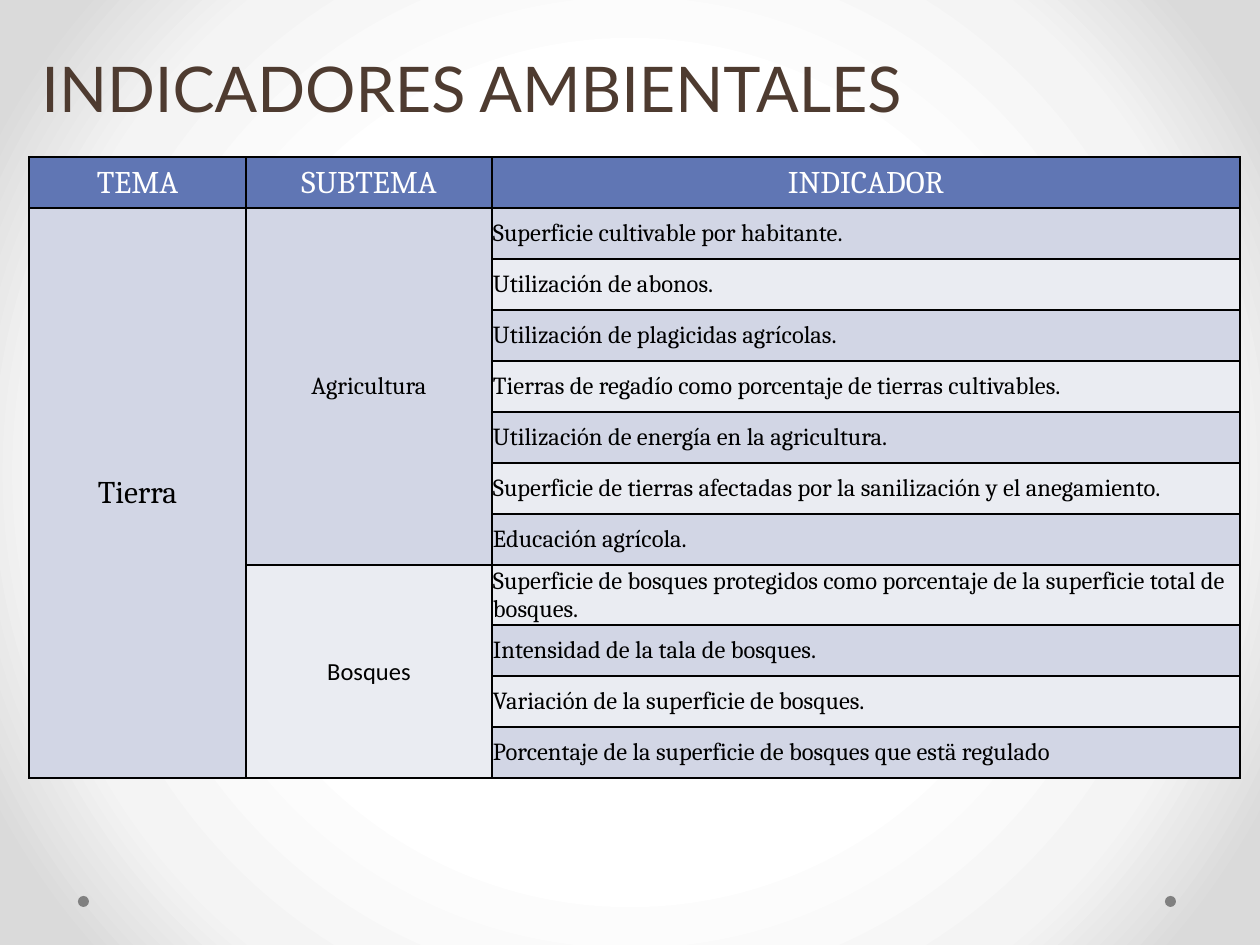
import pptx
import pptx.util
import pptx.dml.color
import pptx.enum.shapes
import pptx.enum.text
import pptx.oxml
import pptx.oxml.ns
from lxml import etree

RGB = pptx.dml.color.RGBColor
ALIGN = pptx.enum.text.PP_ALIGN
MIDDLE = pptx.enum.text.MSO_ANCHOR.MIDDLE
qn = pptx.oxml.ns.qn

# Content
TITLE = "INDICADORES AMBIENTALES"
HEADERS = ["TEMA", "SUBTEMA", "INDICADOR"]
THEME = "Tierra"
SUBTHEMES = [
    ("Agricultura", "Cambria", [
        "Superficie cultivable por habitante.",
        "Utilización de abonos.",
        "Utilización de plagicidas agrícolas.",
        "Tierras de regadío como porcentaje de tierras cultivables.",
        "Utilización de energía en la agricultura.",
        "Superficie de tierras afectadas por la sanilización y el anegamiento.",
        "Educación agrícola.",
    ]),
    ("Bosques", "Calibri", [
        "Superficie de bosques protegidos como porcentaje de la superficie total de bosques.",
        "Intensidad de la tala de bosques.",
        "Variación de la superficie de bosques.",
        "Porcentaje de la superficie de bosques que estä regulado",
    ]),
]

# Colours
BROWN = RGB(0x4E, 0x3B, 0x30)
WHITE = RGB(0xFF, 0xFF, 0xFF)
BLACK = RGB(0, 0, 0)
GREY = RGB(0x80, 0x80, 0x80)
HEADER_BLUE = RGB(0x60, 0x76, 0xB4)
BANDS = [RGB(0xD2, 0xD6, 0xE5), RGB(0xEA, 0xEC, 0xF2)]
GLOW = [(50, WHITE), (76, RGB(0xF4, 0xF4, 0xF4)), (92, RGB(0xDA, 0xDA, 0xDA))]

# Layout in px, 126 to the inch
SCALE = 914400 / 126
COLUMNS = [217, 246, 748]
ROW_HEIGHT = 51
TABLE_LEFT, TABLE_TOP = 29, 157
DOT_LEFTS, DOT_TOP, DOT_SIZE = [78, 1165], 896, 11


def px(length):
    return pptx.util.Emu(round(length * SCALE))


def write(frame, text, font="Cambria", size=14, color=BLACK, align=ALIGN.LEFT):
    paragraph = frame.paragraphs[0]
    paragraph.alignment = align
    run = paragraph.add_run()
    run.text = text
    run.font.name = font
    run.font.size = pptx.util.Pt(size)
    run.font.color.rgb = color


def add_borders(cell):
    properties = cell._tc.get_or_add_tcPr()
    for index, side in enumerate(["lnL", "lnR", "lnT", "lnB"]):
        line = etree.Element(qn(f"a:{side}"), w="12700")
        fill = etree.SubElement(line, qn("a:solidFill"))
        etree.SubElement(fill, qn("a:srgbClr"), val=str(BLACK))
        properties.insert(index, line)


def paint_background(slide):
    slide.background.fill.gradient()
    gradient = slide.element.find(".//" + qn("a:gradFill"))
    for child in list(gradient):
        gradient.remove(child)
    stops = etree.SubElement(gradient, qn("a:gsLst"))
    for position, color in GLOW:
        stop = etree.SubElement(stops, qn("a:gs"), pos=str(position * 1000))
        etree.SubElement(stop, qn("a:srgbClr"), val=str(color))
    circle = etree.SubElement(gradient, qn("a:path"), {"path": "circle"})
    etree.SubElement(circle, qn("a:fillToRect"), l="50000", t="50000", r="50000", b="50000")


def add_indicators(slide):
    row_count = 1 + sum(len(indicators) for _, _, indicators in SUBTHEMES)
    table = slide.shapes.add_table(
        row_count, len(COLUMNS), px(TABLE_LEFT), px(TABLE_TOP),
        px(sum(COLUMNS)), px(ROW_HEIGHT * row_count)).table
    for column, width in zip(table.columns, COLUMNS):
        column.width = px(width)

    # Banding, borders and margins
    for row in range(row_count):
        table.rows[row].height = px(ROW_HEIGHT)
        for column in range(len(COLUMNS)):
            cell = table.cell(row, column)
            cell.vertical_anchor = MIDDLE
            cell.margin_left = cell.margin_right = cell.margin_top = px(1)
            cell.margin_bottom = 0
            cell.fill.solid()
            cell.fill.fore_color.rgb = BANDS[(row - 1) % 2] if row else HEADER_BLUE
            add_borders(cell)

    # Header, theme, then each subtheme with its indicators
    for column, header in enumerate(HEADERS):
        write(table.cell(0, column).text_frame, header, size=18, color=WHITE, align=ALIGN.CENTER)
    table.cell(1, 0).merge(table.cell(row_count - 1, 0))
    write(table.cell(1, 0).text_frame, THEME, size=18, align=ALIGN.CENTER)
    first = 1
    for subtheme, font, indicators in SUBTHEMES:
        subtheme_cell = table.cell(first, 1)
        subtheme_cell.merge(table.cell(first + len(indicators) - 1, 1))
        write(subtheme_cell.text_frame, subtheme, font=font, align=ALIGN.CENTER)
        for row, indicator in enumerate(indicators, first):
            write(table.cell(row, 2).text_frame, indicator)
        first += len(indicators)


def main():
    deck = pptx.Presentation()
    deck.slide_width, deck.slide_height = px(1260), px(945)
    slide = deck.slides.add_slide(deck.slide_layouts[6])
    paint_background(slide)

    # Corner dots
    for left in DOT_LEFTS:
        dot = slide.shapes.add_shape(
            pptx.enum.shapes.MSO_SHAPE.OVAL, px(left), px(DOT_TOP), px(DOT_SIZE), px(DOT_SIZE))
        dot.shadow.inherit = False
        dot.fill.solid()
        dot.fill.fore_color.rgb = GREY
        dot.line.fill.background()

    # Title
    title = slide.shapes.add_textbox(px(29), px(29), px(1197), px(116)).text_frame
    title.word_wrap = True
    title.vertical_anchor = MIDDLE
    write(title, TITLE, font="Lato", size=36, color=BROWN)

    add_indicators(slide)
    deck.save("out.pptx")


if __name__ == "__main__":
    main()
